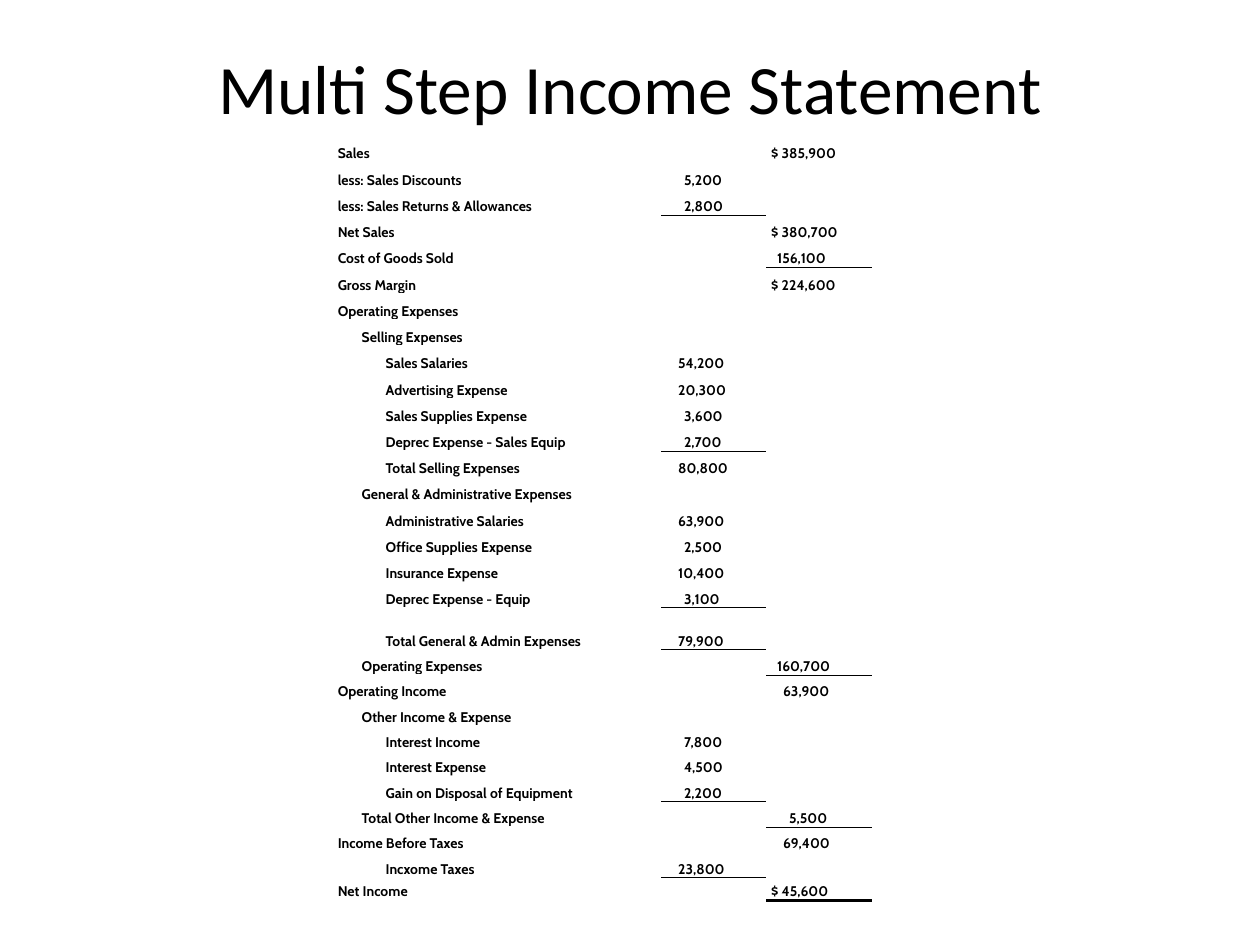
from lxml import etree
from pptx import Presentation
from pptx.dml.color import RGBColor
from pptx.enum.text import MSO_ANCHOR, PP_ALIGN
from pptx.oxml.ns import qn
from pptx.util import Pt

BOTTOM, MIDDLE, CENTER = MSO_ANCHOR.BOTTOM, MSO_ANCHOR.MIDDLE, PP_ALIGN.CENTER
BLACK = "000000"
TITLE = "Multi Step Income Statement"
DETAIL, TOTAL = 3, 4
THIN, THICK = 0.5, 2

# indent level, label, amount, amount column, rule below
STATEMENT = [
    (0, "Sales", "$ 385,900", TOTAL, 0),
    (0, "less: Sales Discounts", "5,200", DETAIL, 0),
    (0, "less: Sales Returns & Allowances", "2,800", DETAIL, THIN),
    (0, "Net Sales", "$ 380,700", TOTAL, 0),
    (0, "Cost of Goods Sold", "156,100", TOTAL, THIN),
    (0, "Gross Margin", "$ 224,600", TOTAL, 0),
    (0, "Operating Expenses", "", TOTAL, 0),
    (1, "Selling Expenses", "", TOTAL, 0),
    (2, "Sales Salaries", "54,200", DETAIL, 0),
    (2, "Advertising Expense", "20,300", DETAIL, 0),
    (2, "Sales Supplies Expense", "3,600", DETAIL, 0),
    (2, "Deprec Expense - Sales Equip", "2,700", DETAIL, THIN),
    (2, "Total Selling Expenses", "80,800", DETAIL, 0),
    (1, "General & Administrative Expenses", "", TOTAL, 0),
    (2, "Administrative Salaries", "63,900", DETAIL, 0),
    (2, "Office Supplies Expense", "2,500", DETAIL, 0),
    (2, "Insurance Expense", "10,400", DETAIL, 0),
    (2, "Deprec Expense - Equip", "3,100", DETAIL, THIN),
    (2, "Total General & Admin Expenses", "79,900", DETAIL, THIN),
    (1, "Operating Expenses", "160,700", TOTAL, THIN),
    (0, "Operating Income", "63,900", TOTAL, 0),
    (1, "Other Income & Expense", "", TOTAL, 0),
    (2, "Interest Income", "7,800", DETAIL, 0),
    (2, "Interest Expense", "4,500", DETAIL, 0),
    (2, "Gain on Disposal of Equipment", "2,200", DETAIL, THIN),
    (1, "Total Other Income & Expense", "5,500", TOTAL, THIN),
    (0, "Income Before Taxes", "69,400", TOTAL, 0),
    (2, "Incxome Taxes", "23,800", DETAIL, THIN),
    (0, "Net Income", "$ 45,600", TOTAL, THICK),
    (0, "", "", TOTAL, 0),
]
COLUMN_WIDTHS = [13.7, 13.7, 158.6, 60, 59.5]
ROW_HEIGHTS = [15] * 17 + [14.5, 24] + [14.5] * 9 + [13, 12.2]
TABLE_LEFT, TABLE_TOP = 192.3, 77.8
CELL_INSET, DIGIT_STEP = 0.72, 1.7


def color(value):
    return RGBColor.from_string(value)


def style_text(paragraph, size, name, bold=False):
    for run in paragraph.runs:
        run.font.size = Pt(size)
        run.font.name = name
        run.font.bold = bold
        run.font.color.rgb = color(BLACK)


def amount_indent(amount):
    steps = 1 if amount.startswith("$") else 2 * (8 - len(amount)) + 1
    return steps * DIGIT_STEP


def write_cell(cell, text, indent=0):
    cell.text_frame.text = text
    cell.margin_left = Pt(CELL_INSET + indent)
    style_text(cell.text_frame.paragraphs[0], 8, "Cabin", True)


def add_border(cell, side, width):
    properties = cell._tc.get_or_add_tcPr()
    line = etree.SubElement(properties, qn(f"a:ln{side}"), w=str(Pt(width)))
    fill = etree.SubElement(line, qn("a:solidFill"))
    etree.SubElement(fill, qn("a:srgbClr"), val=BLACK)


def prepare_cell(cell):
    cell.fill.background()
    cell.vertical_anchor = BOTTOM
    cell.margin_left = cell.margin_right = cell.margin_top = Pt(CELL_INSET)
    cell.margin_bottom = 0
    paragraph = cell.text_frame.paragraphs[0]
    etree.SubElement(paragraph._p, qn("a:endParaRPr"), sz="800")


def add_title(slide):
    box = slide.shapes.add_textbox(Pt(36), Pt(21.6), Pt(648), Pt(56.2))
    frame = box.text_frame
    frame.word_wrap = True
    frame.vertical_anchor = MIDDLE
    frame.text = TITLE
    frame.paragraphs[0].alignment = CENTER
    style_text(frame.paragraphs[0], 39.6, "Calibri")


def add_statement(slide):
    table = slide.shapes.add_table(
        len(STATEMENT), len(COLUMN_WIDTHS), Pt(TABLE_LEFT), Pt(TABLE_TOP),
        Pt(sum(COLUMN_WIDTHS)), Pt(sum(ROW_HEIGHTS))).table
    table.first_row = table.horz_banding = False
    for column, width in zip(table.columns, COLUMN_WIDTHS):
        column.width = Pt(width)
    for row, height in zip(table.rows, ROW_HEIGHTS):
        row.height = Pt(height)

    rules = {(i, row[3]): row[4] for i, row in enumerate(STATEMENT) if row[4]}
    for i, (level, label, amount, amount_column, _) in enumerate(STATEMENT):
        for j in range(len(COLUMN_WIDTHS)):
            cell = table.cell(i, j)
            for side, key in (("T", (i - 1, j)), ("B", (i, j))):
                if key in rules:
                    add_border(cell, side, rules[key])
            prepare_cell(cell)
        if label:
            if level < 2:
                table.cell(i, level).merge(table.cell(i, 2))
            write_cell(table.cell(i, level), label)
        if amount:
            write_cell(table.cell(i, amount_column), amount, amount_indent(amount))


def main():
    presentation = Presentation()
    presentation.slide_width, presentation.slide_height = Pt(720), Pt(540)
    slide = presentation.slides.add_slide(presentation.slide_layouts[6])
    add_title(slide)
    add_statement(slide)
    presentation.save("out.pptx")


if __name__ == "__main__":
    main()
